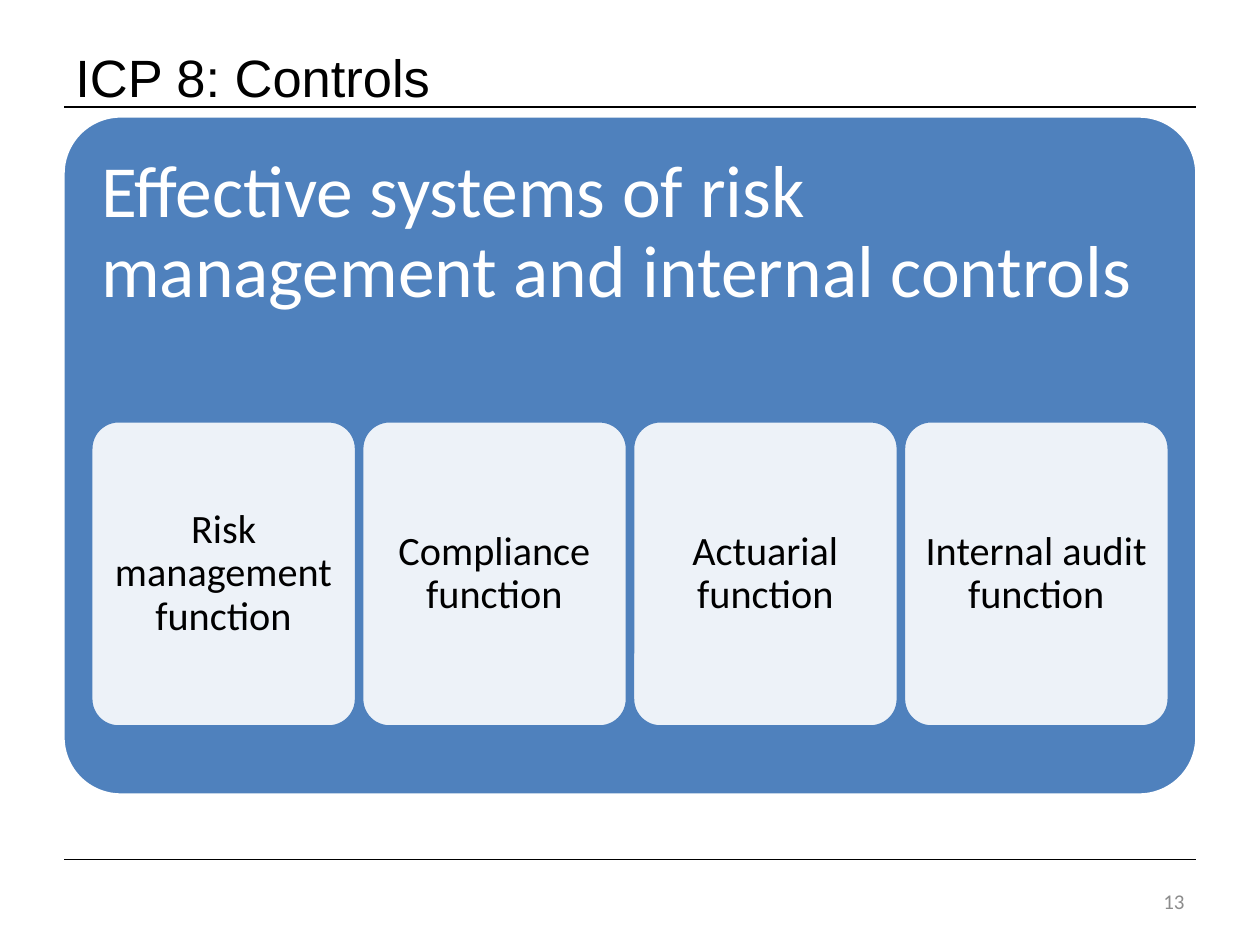
from pptx import Presentation
from pptx.dml.color import RGBColor
from pptx.enum.shapes import MSO_CONNECTOR, MSO_SHAPE
from pptx.enum.text import MSO_ANCHOR, PP_ALIGN
from pptx.oxml.ns import qn
from pptx.util import Inches, Pt
from lxml import etree

LINE = MSO_CONNECTOR.STRAIGHT
ROUND = MSO_SHAPE.ROUNDED_RECTANGLE
TOP, MIDDLE = MSO_ANCHOR.TOP, MSO_ANCHOR.MIDDLE
LEFT, CENTER, RIGHT = PP_ALIGN.LEFT, PP_ALIGN.CENTER, PP_ALIGN.RIGHT
COLORS = {"black": "000000", "white": "FFFFFF", "blue": "4F81BD", "gray": "8C8C8C"}


class Deck:
    """Holds the style and the current slide."""

    def __init__(self):
        self.prs = Presentation()
        self.prs.slide_width, self.prs.slide_height = Inches(10), Inches(7.5)
        self.slide = self.prs.slides.add_slide(self.prs.slide_layouts[6])

    def color(self, name):
        return RGBColor.from_string(COLORS[name])

    def words(self, shape, text, size, color, align, anchor, font="Calibri",
              pads=(0.1, 0.05, 0.1, 0.05), space=1.0):
        frame = shape.text_frame
        frame.word_wrap = True
        frame.vertical_anchor = anchor
        (frame.margin_left, frame.margin_top,
         frame.margin_right, frame.margin_bottom) = map(Inches, pads)
        para = frame.paragraphs[0]
        para.alignment, para.line_spacing = align, space
        run = para.add_run()
        run.text = text
        run.font.name, run.font.size = font, Pt(size)
        run.font.color.rgb = self.color(color)

    def label(self, box, *args, **style):
        shape = self.slide.shapes.add_textbox(*map(Inches, box))
        self.words(shape, *args, **style)

    def panel(self, box, curve, fill, line, *args, alpha=100, **style):
        shape = self.slide.shapes.add_shape(ROUND, *map(Inches, box))
        shape.shadow.inherit = False
        shape.adjustments[0] = curve
        shape.fill.solid()
        shape.fill.fore_color.rgb = self.color(fill)
        if alpha < 100:
            tint = shape._element.spPr.find(qn("a:solidFill"))[0]
            etree.SubElement(tint, qn("a:alpha"), val=str(alpha * 1000))
        shape.line.color.rgb = self.color(line)
        shape.line.width = Pt(2)
        self.words(shape, *args, space=0.9, **style)

    def rule(self, y):
        line = self.slide.shapes.add_connector(
            LINE, Inches(0.51), Inches(y), Inches(9.49), Inches(y))
        line.line.color.rgb = self.color("black")
        line.line.width = Pt(0.75)
        etree.SubElement(line._element.spPr, qn("a:effectLst"))


def main():
    deck = Deck()
    for y in (0.85, 6.82):
        deck.rule(y)
    deck.label((0.5, 0.3, 9, 0.61), "ICP 8: Controls", 30, "black",
               LEFT, MIDDLE, font="Arial")
    deck.panel((0.5, 0.92, 9, 5.39), 0.085, "blue", "white",
               "Effective systems of risk management and internal controls",
               42, "white", LEFT, TOP, pads=(0.17, 0.17, 0.17, 3.33))
    roles = ("Risk management", "Compliance", "Actuarial", "Internal audit")
    width, step = 2.11, 2.15
    for i, role in enumerate(roles):
        deck.panel((0.72 + i * step, 3.34, width, 2.43), 0.105, "white", "blue",
                   f"{role} function", 23, "black", CENTER, MIDDLE,
                   alpha=90, pads=(0.1,) * 4)
    deck.label((7.17, 6.95, 2.33, 0.4), "13", 12, "gray", RIGHT, MIDDLE)
    deck.prs.save("out.pptx")


if __name__ == "__main__":
    main()
